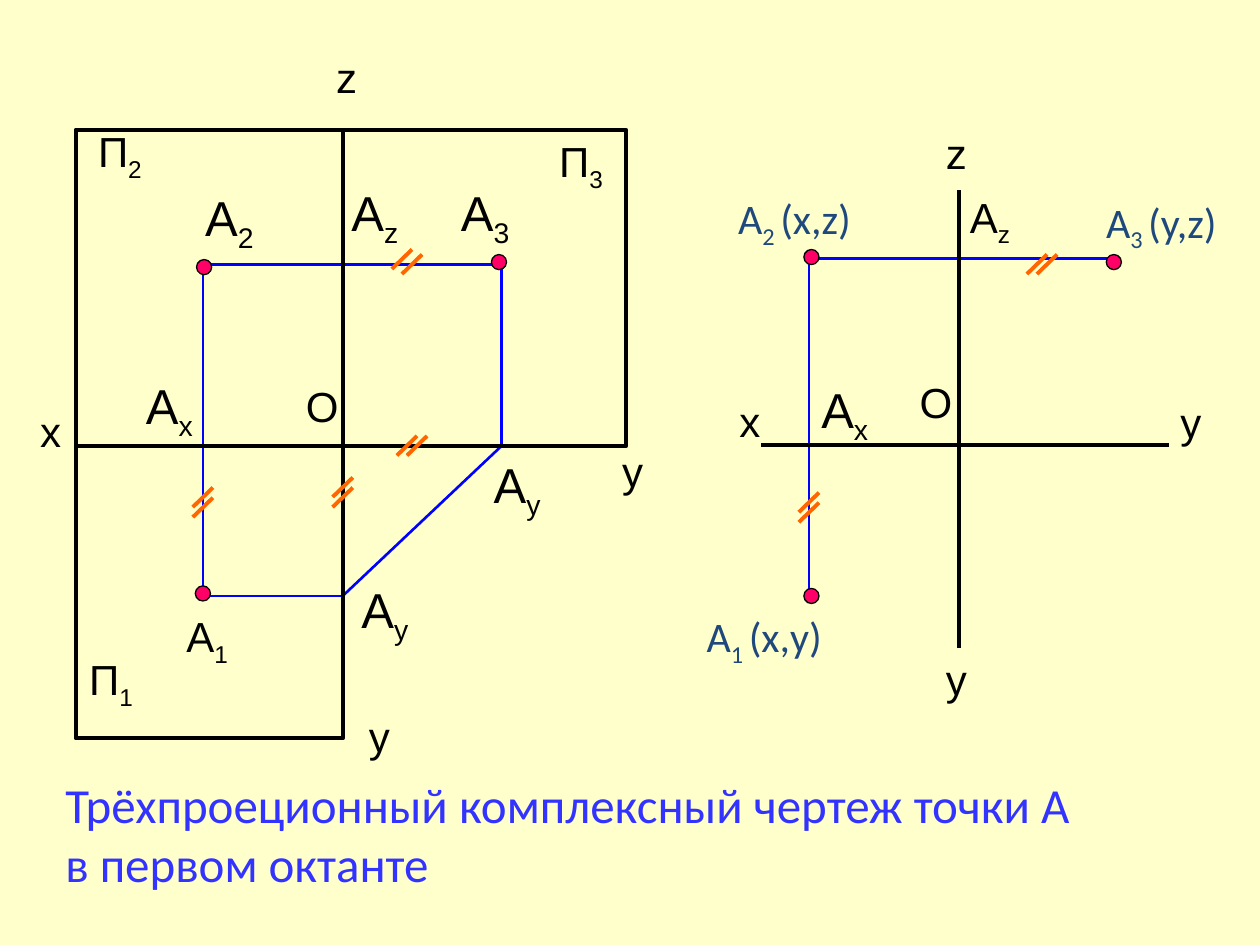
from dataclasses import dataclass
from typing import Any

from lxml import etree
from pptx import Presentation
from pptx.dml.color import RGBColor
from pptx.enum import shapes, text
from pptx.oxml.ns import qn
from pptx.util import Inches, Pt

COLUMNS, ROWS = 100, 75
WIDTH, HEIGHT = Inches(10), Inches(7.5)
COLORS = {
    "background": "FFFFCC",
    "frame": "000000",
    "projection": "0000FF",
    "tick": "FF6600",
    "point": "FF0066",
    "heading": "3333FF",
    "coordinates": "1F497D",
}
LINE_WIDTHS = {"frame": 2.25, "projection": 1.5, "tick": 2.25}
POINT_SIZE = 1.2
TICK_WIDTH, TICK_HEIGHT = 1.6, 1.55
LABEL_HEIGHTS = {24: 5, 28: 5.7}


def color(name):
    return RGBColor.from_string(COLORS[name])


@dataclass
class Region:
    """A box on the slide grid; its parts are placed from its top left corner."""
    slide: Any
    left: float
    top: float
    width: float
    height: float

    def place(self, column, row):
        return (round((self.left + column) * WIDTH / COLUMNS),
                round((self.top + row) * HEIGHT / ROWS))

    def box(self, column, row, width, height):
        return (*self.place(column, row),
                round(width * WIDTH / COLUMNS), round(height * HEIGHT / ROWS))


def add_line(region, start, end, kind):
    line = region.slide.shapes.add_connector(
        shapes.MSO_CONNECTOR.STRAIGHT, *region.place(*start), *region.place(*end))
    line.line.color.rgb = color(kind)
    line.line.width = Pt(LINE_WIDTHS[kind])
    etree.SubElement(line._element.spPr, qn("a:effectLst"))


def add_ticks(region, column, row, step):
    """Two parallel strokes that mark equal segments."""
    for index in range(2):
        left, top = column + index * step[0], row + index * step[1]
        add_line(region, (left, top + TICK_HEIGHT), (left + TICK_WIDTH, top), "tick")


def add_point(region, column, row):
    point = region.slide.shapes.add_shape(
        shapes.MSO_SHAPE.OVAL,
        *region.box(column - POINT_SIZE / 2, row - POINT_SIZE / 2, POINT_SIZE, POINT_SIZE))
    point.shadow.inherit = False
    point.fill.solid()
    point.fill.fore_color.rgb = color("point")
    point.line.color.rgb = color("frame")
    point.line.width = Pt(0.75)


def add_frame(region, column, row, width, height):
    frame = region.slide.shapes.add_shape(
        shapes.MSO_SHAPE.RECTANGLE, *region.box(column, row, width, height))
    frame.shadow.inherit = False
    frame.fill.background()
    frame.line.color.rgb = color("frame")
    frame.line.width = Pt(LINE_WIDTHS["frame"])


def add_text_box(region, box, **frame_format):
    frame = region.slide.shapes.add_textbox(*region.box(*box)).text_frame
    for name, value in frame_format.items():
        setattr(frame, name, value)
    return frame


def add_run(paragraph, words, subscript=False, **font_format):
    run = paragraph.add_run()
    run.text = words
    run.font.color.rgb = color(font_format.pop("color"))
    for name, value in font_format.items():
        setattr(run.font, name, value)
    if subscript:
        run._r.get_or_add_rPr().set("baseline", "-25000")


def add_label(region, parts, column, row, width, size=24, font="Arial", ink="frame"):
    """The parts are a letter, its index and the text after the index."""
    frame = add_text_box(region, (column, row, width, LABEL_HEIGHTS[size]), word_wrap=False,
                         auto_size=text.MSO_AUTO_SIZE.SHAPE_TO_FIT_TEXT)
    for index, words in enumerate(parts):
        add_run(frame.paragraphs[0], words, subscript=index == 1,
                size=Pt(size), name=font, color=ink)


def draw_planes(region):
    axis, ground = 21.2, 25.1
    left, right, upper, lower = 10.1, 33.8, 10.7, 37

    # Projection lines
    for start, end in [
        ((left, upper), (left, lower)),
        ((left, lower), (axis, lower)),
        ((axis, lower), (right, ground)),
        ((left, upper), (right, upper)),
        ((right, ground), (right, upper)),
    ]:
        add_line(region, start, end, "projection")

    # Projections of the point
    for column, row in [(10.2, 10.9), (10.1, 36.8), (33.6, 10.5)]:
        add_point(region, column, row)

    # Planes and the x axis
    add_frame(region, 0, 0, axis, region.height)
    add_frame(region, axis, 0, region.width - axis, ground)
    add_line(region, (0, ground), (axis, ground), "frame")

    # Marks of equal segments
    for column, row, step in [
        (20.4, 27.6, (0, 0.8)),
        (9.3, 28.4, (0, 0.8)),
        (25.5, 24.3, (0.8, 0)),
        (25.1, 9.5, (0.8, 0.4)),
    ]:
        add_ticks(region, column, row, step)

    # Names of points, planes and axes
    for parts, column, row, width, size in [
        ("А1", 7.8, 37.7, 5.5, 24), ("А2", 9.3, 4.1, 6.1, 28),
        ("А3", 29.6, 3.7, 6.1, 28), ("Аz", 20.9, 3.7, 5.9, 28),
        ("Ах", 4.6, 19, 5.9, 28), ("Аy", 21.7, 35.2, 5.9, 28),
        ("Аy", 32.2, 25.3, 5.9, 28), ("П1", 0.1, 41.1, 5.6, 24),
        ("П2", 0.8, -0.8, 5.6, 24), ("П3", 37.4, 0, 5.6, 24),
        ("О", 17.3, 19.4, 4, 24), ("х", -3.8, 21.4, 3.7, 24),
        ("z", 19.7, -6.7, 3.7, 24), ("y", 42.4, 24.6, 3.7, 24),
        ("y", 22.3, 45.6, 3.7, 24),
    ]:
        add_label(region, parts, column, row, width, size)


def draw_axes(region):
    axis, ground = 15.7, 20.2
    left, right, upper, lower = 3.8, 28, 5.4, 32.2

    # Projection lines and the points they join
    add_line(region, (left, upper), (left, lower), "projection")
    add_line(region, (left, upper), (right, upper), "projection")
    for column, row in [(4, 5.3), (4, 32.2), (28, 5.7)]:
        add_point(region, column, row)

    # Marks of equal segments
    add_ticks(region, 3, 24, (0, 0.8))
    add_ticks(region, 21.1, 5.1, (0.8, 0))

    # Axes
    add_line(region, (0, ground), (region.width, ground), "frame")
    add_line(region, (axis, 0), (axis, region.height), "frame")

    # Names of axes and points
    for parts, column, row, width, size in [
        ("Ах", 3.8, 14.5, 5.9, 28), ("Аz", 15.6, -0.4, 5.4, 24),
        ("О", 11.6, 14.3, 4, 24), ("х", -2.7, 15.8, 3.7, 24),
        ("у", 13.7, 36.3, 3.7, 24), ("у", 32.3, 15.9, 3.7, 24),
        ("z", 13.7, -5.5, 3.7, 24),
    ]:
        add_label(region, parts, column, row, width, size)
    for parts, column, row in [
        (("А", "1 ", "(x,y)"), -5.3, 32.9),
        (("A", "2 ", "(x,z)"), -2.8, -0.3),
        (("A", "3 ", "(y,z)"), 26.4, 0),
    ]:
        add_label(region, parts, column, row, 12.5, font="Calibri", ink="coordinates")


def draw_heading(region):
    frame = add_text_box(region, (0, 0, region.width, region.height), word_wrap=True,
                         vertical_anchor=text.MSO_ANCHOR.MIDDLE)
    lines = ["Трёхпроеционный комплексный чертеж точки А", "в первом октанте"]
    for index, words in enumerate(lines):
        paragraph = frame.add_paragraph() if index else frame.paragraphs[0]
        add_run(paragraph, words, size=Pt(28), name="Calibri", color="heading")


def main():
    presentation = Presentation()
    presentation.slide_width, presentation.slide_height = WIDTH, HEIGHT
    slide = presentation.slides.add_slide(presentation.slide_layouts[6])
    slide.background.fill.solid()
    slide.background.fill.fore_color.rgb = color("background")

    draw_planes(Region(slide, 6, 10.3, 43.7, 48.3))
    draw_axes(Region(slide, 60.4, 15.1, 32.4, 36.3))
    draw_heading(Region(slide, 4.2, 61, 89.7, 10.3))
    presentation.save("out.pptx")


if __name__ == "__main__":
    main()
